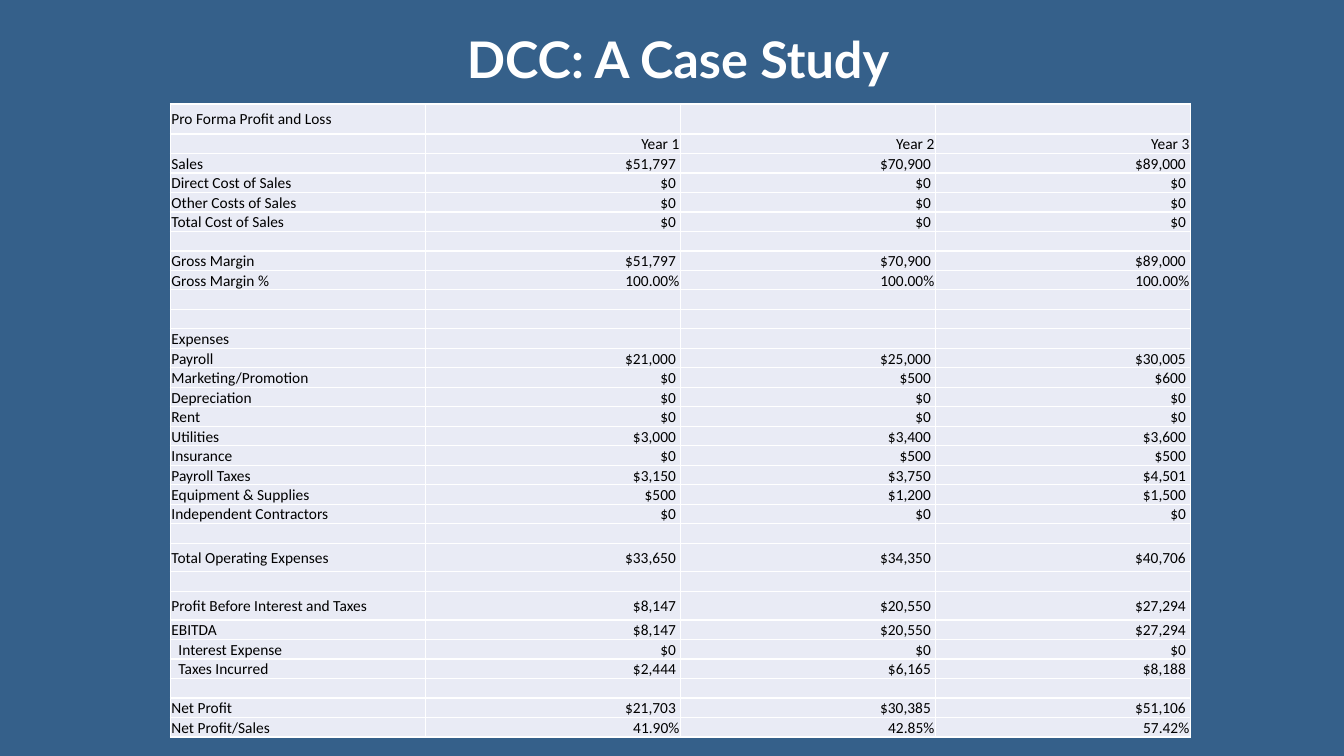
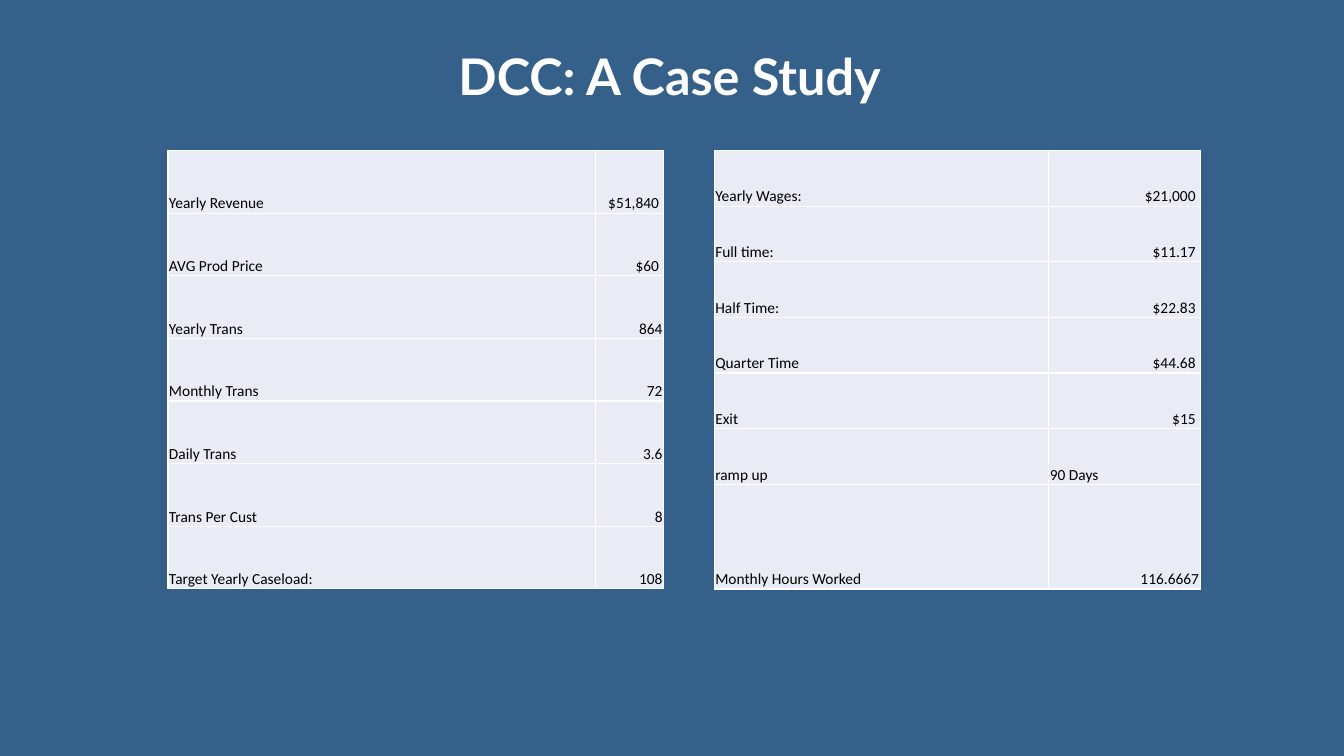
from dataclasses import dataclass

from lxml.etree import SubElement
from pptx import Presentation
from pptx.dml.color import RGBColor
from pptx.enum.text import MSO_ANCHOR, PP_ALIGN
from pptx.oxml.ns import qn
from pptx.util import Pt

BACKGROUND = "35608A"
WHITE = "FFFFFF"
BLACK = "000000"
CELL_FILL = "E9EBF5"
TITLE_FONT = {"name": "Lato", "size": Pt(36), "bold": True}
CELL_FONT = {"name": "Calibri", "size": Pt(11), "bold": False}
CELL_MARGINS = {"margin_left": Pt(0.7), "margin_right": Pt(0.7),
                "margin_top": Pt(0.7), "margin_bottom": Pt(0)}
TABLE_FLAGS = {"first_row": False, "horz_banding": False}
INDENT = 5.7
ROW = 13.9
TALL_ROW = 20.5


@dataclass
class Title:
    left: float
    top: float
    text: str = " DCC: A Case Study"


@dataclass
class Row:
    label: str = ""
    values: tuple = ()
    height: float = ROW
    indent: bool = False


@dataclass
class Grid:
    left: float
    top: float
    widths: list
    rows: list
    anchor: MSO_ANCHOR


@dataclass
class Page:
    title: Title
    grids: list


NONE = ("$0",) * 3
PROFIT_AND_LOSS = [
    Row("Pro Forma Profit and Loss", height=21.5),
    Row("", ("Year 1", "Year 2", "Year 3")),
    Row("Sales", ("$51,797", "$70,900", "$89,000")),
    Row("Direct Cost of Sales", NONE),
    Row("Other Costs of Sales", NONE),
    Row("Total Cost of Sales", NONE),
    Row(),
    Row("Gross Margin", ("$51,797", "$70,900", "$89,000")),
    Row("Gross Margin %", ("100.00%",) * 3),
    Row(),
    Row(),
    Row("Expenses"),
    Row("Payroll", ("$21,000", "$25,000", "$30,005")),
    Row("Marketing/Promotion", ("$0", "$500", "$600")),
    Row("Depreciation", NONE),
    Row("Rent", NONE),
    Row("Utilities", ("$3,000", "$3,400", "$3,600")),
    Row("Insurance", ("$0", "$500", "$500")),
    Row("Payroll Taxes", ("$3,150", "$3,750", "$4,501")),
    Row("Equipment & Supplies", ("$500", "$1,200", "$1,500")),
    Row("Independent Contractors", NONE),
    Row(),
    Row("Total Operating Expenses", ("$33,650", "$34,350", "$40,706"), TALL_ROW),
    Row(),
    Row("Profit Before Interest and Taxes", ("$8,147", "$20,550", "$27,294"), TALL_ROW),
    Row("EBITDA", ("$8,147", "$20,550", "$27,294")),
    Row("Interest Expense", NONE, indent=True),
    Row("Taxes Incurred", ("$2,444", "$6,165", "$8,188"), indent=True),
    Row(),
    Row("Net Profit", ("$21,703", "$30,385", "$51,106")),
    Row("Net Profit/Sales", ("41.90%", "42.85%", "57.42%")),
]

REVENUE = [Row(label, (value,), 44.75) for label, value in (
    ("Yearly Revenue", "$51,840"),
    ("AVG Prod Price", "$60"),
    ("Yearly Trans", "864"),
    ("Monthly Trans", "72"),
    ("Daily Trans", "3.6"),
    ("Trans Per Cust", "8"),
    ("Target Yearly Caseload:", "108"),
)]

WAGES = [Row(label, (value,), 39.75) for label, value in (
    ("Yearly Wages:", "$21,000"),
    ("Full time:", "$11.17"),
    ("Half Time:", "$22.83"),
    ("Quarter Time", "$44.68"),
    ("Exit", "$15"),
    ("ramp up", "90 Days"),
)] + [Row("Monthly Hours Worked", ("116.6667",), 74.75)]

PAGES = [
    Page(Title(66, 2.25),
         [Grid(121.75, 74.25, [182.15] * 4, PROFIT_AND_LOSS, MSO_ANCHOR.MIDDLE)]),
    Page(Title(60, 13.75),
         [Grid(120, 107.5, [305.25, 48.75], REVENUE, MSO_ANCHOR.BOTTOM),
          Grid(510.25, 107.5, [239, 108], WAGES, MSO_ANCHOR.BOTTOM)]),
]


def rgb(color: str) -> RGBColor:
    return RGBColor.from_string(color)


def apply(target, values: dict) -> None:
    for name, value in values.items():
        setattr(target, name, value)


def write(p, text: str, font: dict, color: str) -> None:
    r = p.add_run()
    r.text = text
    apply(r.font, font)
    r.font.color.rgb = rgb(color)


def add_title(s, title: Title) -> None:
    sp = s.shapes.add_textbox(Pt(title.left), Pt(title.top), Pt(828), Pt(85))
    tf = sp.text_frame
    apply(tf, {"word_wrap": True, "vertical_anchor": MSO_ANCHOR.MIDDLE})
    p = tf.paragraphs[0]
    apply(p, {"alignment": PP_ALIGN.CENTER, "line_spacing": 0.9})
    write(p, title.text, TITLE_FONT, WHITE)


def add_borders(cell, color: str) -> None:
    tc_pr = cell._tc.get_or_add_tcPr()
    for side in ("a:lnL", "a:lnR", "a:lnT", "a:lnB"):
        ln = SubElement(tc_pr, qn(side), w=str(Pt(1)))
        fill = SubElement(ln, qn("a:solidFill"))
        SubElement(fill, qn("a:srgbClr"), val=color)


def fill_cell(cell, text: str, anchor: MSO_ANCHOR, is_label: bool) -> None:
    apply(cell, {**CELL_MARGINS, "vertical_anchor": anchor})
    add_borders(cell, WHITE)
    cell.fill.solid()
    cell.fill.fore_color.rgb = rgb(CELL_FILL)
    p = cell.text_frame.paragraphs[0]
    if not text:
        SubElement(p._p, qn("a:endParaRPr"), sz="1100")
        return
    is_left = is_label or text[-1].isalpha()
    p.alignment = PP_ALIGN.LEFT if is_left else PP_ALIGN.RIGHT
    write(p, f"{text} " if text.startswith("$") else text, CELL_FONT, BLACK)


def add_grid(s, grid: Grid) -> None:
    width = sum(grid.widths)
    height = sum(row.height for row in grid.rows)
    table = s.shapes.add_table(len(grid.rows), len(grid.widths), Pt(grid.left),
                               Pt(grid.top), Pt(width), Pt(height)).table
    apply(table, TABLE_FLAGS)
    for column, column_width in zip(table.columns, grid.widths):
        column.width = Pt(column_width)
    for i, row in enumerate(grid.rows):
        table.rows[i].height = Pt(row.height)
        texts = (row.label, *row.values)
        for j in range(len(grid.widths)):
            text = texts[j] if j < len(texts) else ""
            fill_cell(table.cell(i, j), text, grid.anchor, j == 0)
        if row.indent:
            table.cell(i, 0).margin_left = Pt(INDENT)


def main() -> None:
    prs = Presentation()
    apply(prs, {"slide_width": Pt(960), "slide_height": Pt(540)})
    background = prs.slide_master.background.fill
    background.solid()
    background.fore_color.rgb = rgb(BACKGROUND)
    for page in PAGES:
        s = prs.slides.add_slide(prs.slide_layouts[6])
        add_title(s, page.title)
        for grid in page.grids:
            add_grid(s, grid)
    prs.save("out.pptx")


if __name__ == "__main__":
    main()
